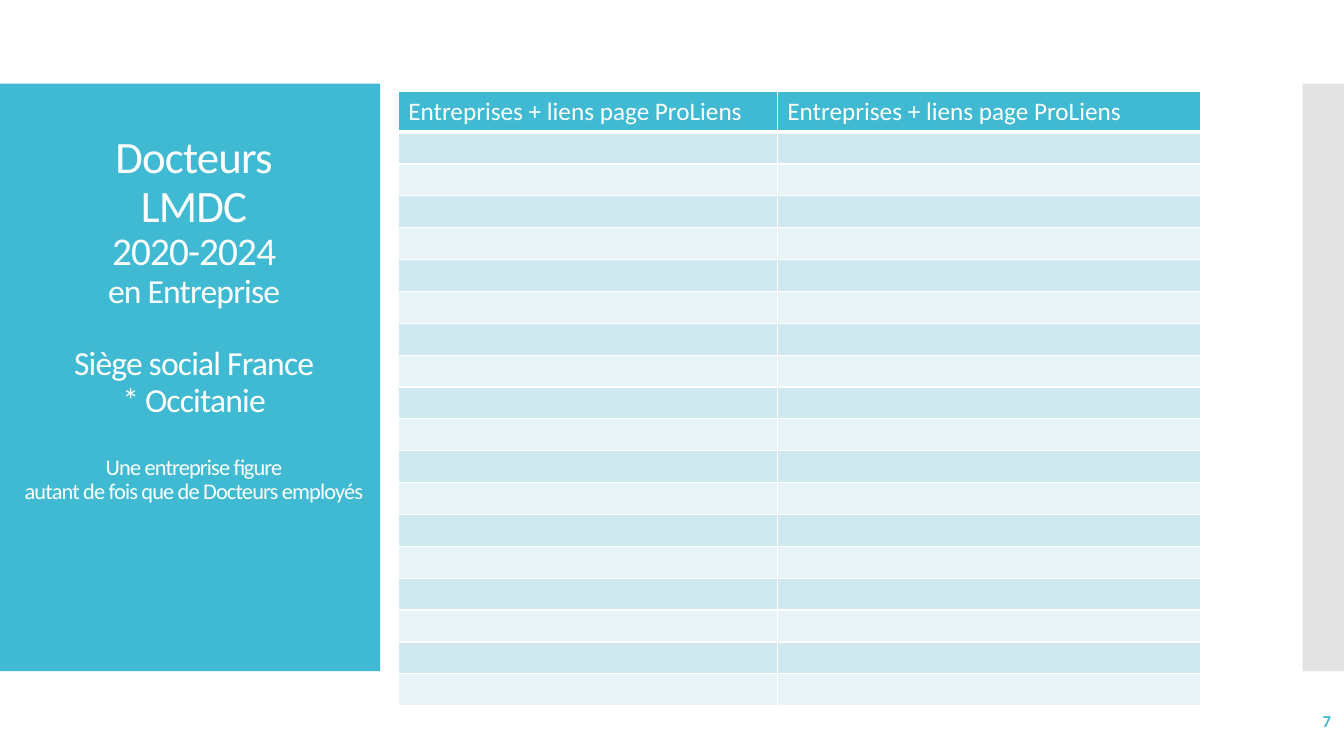
from dataclasses import dataclass

from lxml.etree import SubElement
from pptx import Presentation
from pptx.dml.color import RGBColor
from pptx.enum.shapes import MSO_SHAPE
from pptx.enum.text import MSO_ANCHOR, PP_ALIGN
from pptx.oxml.ns import qn
from pptx.util import Inches, Pt

TEAL = RGBColor(0x40, 0xBA, 0xD2)
GREY = RGBColor(0xC8, 0xC8, 0xC8)
WHITE = RGBColor(0xFF, 0xFF, 0xFF)
BAND_DARK = RGBColor(0xCF, 0xE7, 0xEE)
BAND_LIGHT = RGBColor(0xE8, 0xF3, 0xF7)
FONT = "Calibri"
HEADER = "Entreprises + liens page ProLiens"
ROW_COUNT = 19
COLUMN_WIDTHS = (3.76, 4.2)
TABLE_HEIGHT = 6.01


@dataclass
class Panel:
    left: float
    width: float
    color: RGBColor
    opacity: int = 100


@dataclass
class TitleLine:
    text: str
    size: int
    space_before: float = 0


PANELS = (Panel(0, 3.77, TEAL), Panel(12.92, 0.42, GREY, 50))
TITLE_LINES = (
    TitleLine("Docteurs", 32),
    TitleLine("LMDC", 32),
    TitleLine("2020-2024", 28),
    TitleLine("en Entreprise", 24),
    TitleLine("Siège social France", 24, 26),
    TitleLine("* Occitanie", 24),
    TitleLine("Une entreprise figure", 16, 26),
    TitleLine("autant de fois que de Docteurs employés", 16),
)


def format_paragraph(paragraph, size: int, color: RGBColor, align, bold: bool = False) -> None:
    paragraph.alignment = align
    font = paragraph.font
    font.name, font.size, font.bold = FONT, Pt(size), bold
    font.color.rgb = color


def add_panel(slide, panel: Panel) -> None:
    shape = slide.shapes.add_shape(
        MSO_SHAPE.RECTANGLE, Inches(panel.left), Inches(0.83), Inches(panel.width), Inches(5.83)
    )
    shape.shadow.inherit = False
    shape.fill.solid()
    shape.fill.fore_color.rgb = panel.color
    shape.line.fill.background()
    if panel.opacity < 100:
        color = shape.fill._xPr.find(".//" + qn("a:srgbClr"))
        SubElement(color, qn("a:alpha"), val=str(panel.opacity * 1000))


def fill_title(slide) -> None:
    title = slide.shapes.title
    title.left, title.top = Inches(0.11), Inches(1.23)
    title.width, title.height = Inches(3.63), Inches(5.03)
    frame = title.text_frame
    frame.word_wrap = True
    frame.vertical_anchor = MSO_ANCHOR.TOP
    frame.margin_top = Inches(0.11)
    frame.text = "\n".join(line.text for line in TITLE_LINES)
    for paragraph, line in zip(frame.paragraphs, TITLE_LINES):
        paragraph.line_spacing = 0.9
        paragraph.space_before = Pt(line.space_before)
        format_paragraph(paragraph, line.size, WHITE, PP_ALIGN.CENTER)
        paragraph.runs[0]._r.get_or_add_rPr().set("spc", "-60")


def set_border(cell, side: str, width: float) -> None:
    border = SubElement(cell._tc.get_or_add_tcPr(), qn(f"a:{side}"), w=str(Pt(width)))
    fill = SubElement(border, qn("a:solidFill"))
    SubElement(fill, qn("a:srgbClr"), val=str(WHITE))


def format_cell(cell, row: int) -> None:
    top, bottom = (3 if row == 1 else 1), (3 if row == 0 else 1)
    for side, width in (("lnL", 1), ("lnR", 1), ("lnT", top), ("lnB", bottom)):
        set_border(cell, side, width)
    cell.fill.solid()
    paragraph = cell.text_frame.paragraphs[0]
    if row == 0:
        cell.fill.fore_color.rgb = TEAL
        cell.text = HEADER
        format_paragraph(paragraph, 12, WHITE, PP_ALIGN.CENTER, bold=True)
    else:
        cell.fill.fore_color.rgb = BAND_DARK if row % 2 else BAND_LIGHT
        SubElement(paragraph._p, qn("a:endParaRPr"), sz="1200")


def add_company_table(slide) -> None:
    table = slide.shapes.add_table(
        ROW_COUNT, len(COLUMN_WIDTHS), Inches(3.95), Inches(0.91),
        Inches(sum(COLUMN_WIDTHS)), Inches(TABLE_HEIGHT),
    ).table
    for column, width in zip(table.columns, COLUMN_WIDTHS):
        column.width = Inches(width)
    for index, row in enumerate(table.rows):
        row.height = Inches(TABLE_HEIGHT / ROW_COUNT)
        for cell in row.cells:
            format_cell(cell, index)


def add_slide_number(slide) -> None:
    box = slide.shapes.add_textbox(Inches(11.63), Inches(6.95), Inches(1.67), Inches(0.4))
    frame = box.text_frame
    frame.word_wrap = True
    frame.vertical_anchor = MSO_ANCHOR.MIDDLE
    frame.text = "7"
    format_paragraph(frame.paragraphs[0], 12, TEAL, PP_ALIGN.RIGHT, bold=True)


def main() -> None:
    presentation = Presentation()
    presentation.slide_width, presentation.slide_height = Inches(13.33), Inches(7.5)
    slide = presentation.slides.add_slide(presentation.slide_layouts.get_by_name("Title Only"))
    for panel in PANELS:
        add_panel(slide, panel)
    title_element = slide.shapes.title._element
    title_element.getparent().append(title_element)
    fill_title(slide)
    add_slide_number(slide)
    add_company_table(slide)
    presentation.save("out.pptx")


if __name__ == "__main__":
    main()
